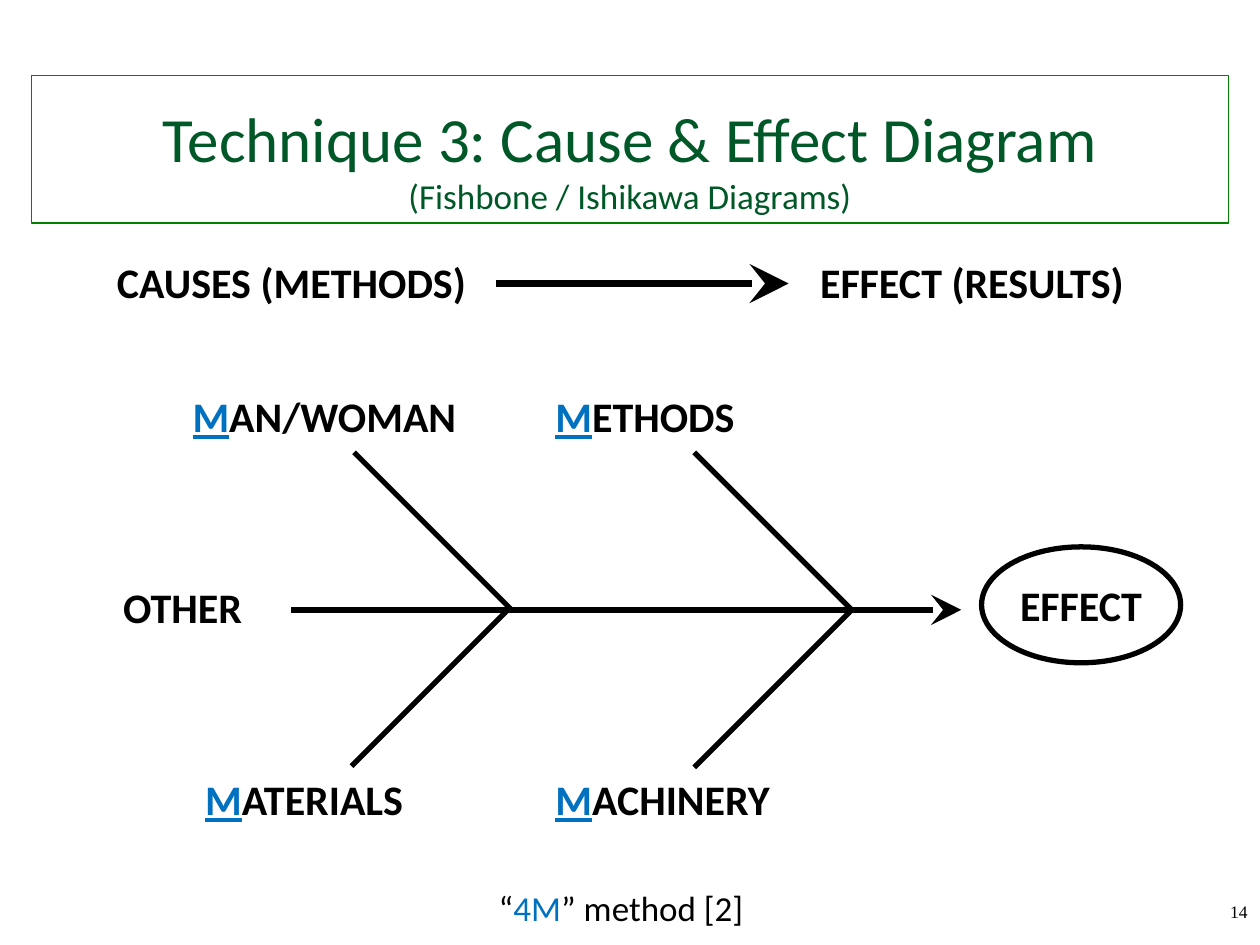
from lxml.etree import SubElement
from pptx import Presentation
from pptx.dml.color import RGBColor
from pptx.enum.shapes import MSO_CONNECTOR, MSO_SHAPE
from pptx.enum.text import MSO_ANCHOR, MSO_AUTO_SIZE, PP_ALIGN
from pptx.oxml.ns import qn
from pptx.util import Inches, Pt

BLACK = RGBColor(0x00, 0x00, 0x00)
BLUE = RGBColor(0x00, 0x70, 0xC0)
GREEN = RGBColor(0x00, 0x58, 0x28)
BORDER = RGBColor(0x00, 0x82, 0x00)

TITLE = "Technique 3: Cause & Effect Diagram"
SUBTITLE = "(Fishbone / Ishikawa Diagrams)"
# text, left, top, width
HEADINGS = [
    ("CAUSES (METHODS)", 0.83, 1.99, 3.02),
    ("EFFECT (RESULTS)", 6.41, 1.99, 2.95),
    ("OTHER", 0.88, 4.57, 1.56),
]
# cause, left, top; the first letter is highlighted
CAUSES = [
    ("MAN/WOMAN", 1.43, 3.05),
    ("METHODS", 4.31, 3.05),
    ("MATERIALS", 1.53, 6.09),
    ("MACHINERY", 4.31, 6.09),
]
SPINE_Y = 4.84
BONE = 1.25  # horizontal and vertical reach of each bone
# x and y of the joint, vertical direction
BONES = [
    (4.06, SPINE_Y, -1),
    (4.04, SPINE_Y - 0.01, 1),
    (6.76, SPINE_Y, -1),
    (6.76, SPINE_Y, 1),
]


def add_run(p, text, size=24, color=BLACK, font="Calibri", bold=False, underline=False):
    r = p.add_run()
    r.text = text
    r.font.size = Pt(size)
    r.font.name = font
    r.font.color.rgb = color
    r.font.bold = bold
    r.font.underline = underline


def add_label(s, runs, left, top, width, height=0.5, align=PP_ALIGN.LEFT):
    """Add a text box; runs is a list of (text, format) pairs."""
    tf = s.shapes.add_textbox(*map(Inches, (left, top, width, height))).text_frame
    tf.word_wrap = True
    p = tf.paragraphs[0]
    p.alignment = align
    for text, fmt in runs:
        add_run(p, text, **fmt)


def add_line(s, x1, y1, x2, y2, width=3, arrow=False):
    line = s.shapes.add_connector(MSO_CONNECTOR.STRAIGHT, *map(Inches, (x1, y1, x2, y2)))
    line.line.color.rgb = BLACK
    line.line.width = Pt(width)
    if arrow:
        SubElement(line.line._get_or_add_ln(), qn("a:tailEnd"), type="stealth", w="lg", len="lg")
    SubElement(line._element.spPr, qn("a:effectLst"))


def add_title(s):
    sp = s.shapes.title
    sp.left, sp.top, sp.width, sp.height = map(Inches, (0.25, 0.6, 9.5, 1.17))
    sp.line.color.rgb = BORDER
    sp.line.width = Pt(0.75)
    tf = sp.text_frame
    tf.auto_size = MSO_AUTO_SIZE.NONE
    tf.vertical_anchor = MSO_ANCHOR.BOTTOM
    p = tf.paragraphs[0]
    p.alignment = PP_ALIGN.CENTER
    add_run(p, TITLE, size=36, color=GREEN)
    p.add_line_break()
    add_run(p, SUBTITLE, size=20, color=GREEN)


def add_effect(s):
    sp = s.shapes.add_shape(MSO_SHAPE.OVAL, *map(Inches, (7.79, 4.34, 1.58, 0.92)))
    sp.shadow.inherit = False
    sp.fill.background()
    sp.line.color.rgb = BLACK
    sp.line.width = Pt(3)
    tf = sp.text_frame
    tf.word_wrap = False
    tf.vertical_anchor = MSO_ANCHOR.MIDDLE
    p = tf.paragraphs[0]
    p.alignment = PP_ALIGN.CENTER
    add_run(p, "EFFECT", bold=True)


def main():
    prs = Presentation()
    prs.slide_width, prs.slide_height = Inches(10), Inches(7.5)
    s = prs.slides.add_slide(prs.slide_layouts[5])
    add_title(s)

    add_line(s, 3.94, 2.25, 6.26, 2.25, width=4.5, arrow=True)
    add_line(s, 2.31, SPINE_Y, 7.63, SPINE_Y, width=3.5, arrow=True)
    for x, y, direction in BONES:
        add_line(s, x, y, x - BONE, y + direction * BONE)
    add_effect(s)

    for text, left, top, width in HEADINGS:
        add_label(s, [(text, dict(bold=True))], left, top, width)
    for cause, left, top in CAUSES:
        runs = [(cause[0], dict(color=BLUE, bold=True, underline=True)),
                (cause[1:], dict(bold=True))]
        add_label(s, runs, left, top, 2.4)

    method = [("“", dict(size=20)), ("4M", dict(size=20, color=BLUE)),
              ("” method [2]", dict(size=20))]
    add_label(s, method, 3.86, 6.99, 3.31, 0.44)
    add_label(s, [("14", dict(size=10, font="Times New Roman"))],
              9.17, 7.1, 0.83, 0.4, align=PP_ALIGN.RIGHT)
    prs.save("out.pptx")


if __name__ == "__main__":
    main()
